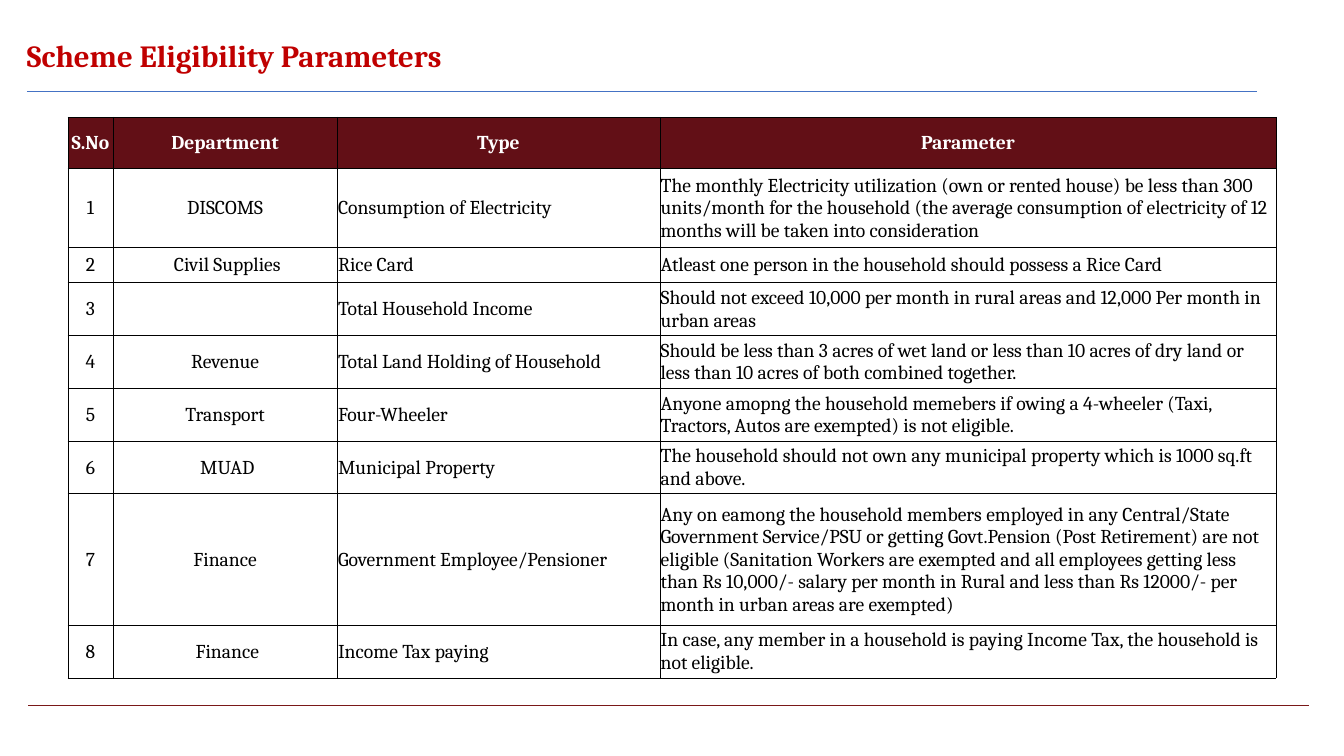
from dataclasses import dataclass

from lxml import etree
from pptx import Presentation
from pptx import util as u
from pptx.dml import color
from pptx.enum import shapes, text
from pptx.oxml import ns


@dataclass(frozen=True)
class Theme:
    font: str = "Cambria"
    title_size: float = 22
    title_leading: float = 23
    table_size: float = 14
    title: str = "C00000"
    header_fill: str = "620F16"
    header_text: str = "FFFFFF"
    body_text: str = "000000"
    border: str = "000000"
    border_width: float = 0.5
    title_rule: str = "4472C4"
    footer_rule: str = "7A1818"


THEME = Theme()
CENTER, LEFT = text.PP_ALIGN.CENTER, text.PP_ALIGN.LEFT

COLUMN_WIDTHS = (1.14, 5.65, 8.13, 15.53)
COLUMN_ALIGNMENTS = (CENTER, CENTER, LEFT, LEFT)
ROW_HEIGHTS = (1.29, 2, 0.88, 1.33, 1.33, 1.33, 1.33, 3.31, 1.33)
HEADERS = ("S.No", "Department", "Type", "Parameter")
CRITERIA = (
    ("DISCOMS", "Consumption of Electricity",
     "The monthly Electricity utilization (own or rented house) be less than 300 "
     "units/month for the household (the average consumption of electricity of 12 "
     "months will be taken into consideration"),
    (" Civil Supplies", "Rice Card",
     "Atleast one person in the household should possess a Rice Card"),
    ("", "Total Household Income",
     "Should not exceed 10,000 per month in rural areas and 12,000 Per month in "
     "urban areas"),
    ("Revenue", "Total Land Holding of Household",
     "Should be less than 3 acres of wet land or less than 10 acres of dry land or "
     "less than 10 acres of both combined together."),
    ("Transport", "Four-Wheeler",
     "Anyone amopng the household memebers if owing a 4-wheeler (Taxi, Tractors, "
     "Autos are exempted) is not eligible."),
    (" MUAD", "Municipal Property",
     "The household should not own any municipal property which is 1000 sq.ft and "
     "above."),
    ("Finance", "Government Employee/Pensioner",
     "Any on eamong the household members employed in any Central/State Government "
     "Service/PSU or getting Govt.Pension (Post Retirement) are not eligible "
     "(Sanitation Workers are exempted and all employees getting less than Rs "
     "10,000/- salary per month in Rural and less than Rs 12000/- per month in urban "
     "areas are exempted)"),
    (" Finance", "Income Tax paying",
     "In case, any member in a household is paying Income Tax, the household is not "
     "eligible."),
)


def rgb(value):
    return color.RGBColor.from_string(value)


def style_font(font, size, ink, bold):
    font.name = THEME.font
    font.size = u.Pt(size)
    font.bold = bold
    font.color.rgb = rgb(ink)


def add_title(page, wording):
    box = page.shapes.title
    box.left, box.top, box.width, box.height = map(u.Cm, (0.68, 1.02, 21.89, 0.83))
    frame = box.text_frame
    frame.margin_left = frame.margin_top = frame.margin_right = frame.margin_bottom = 0
    frame.word_wrap = True
    frame.vertical_anchor = text.MSO_ANCHOR.BOTTOM
    frame.auto_size = text.MSO_AUTO_SIZE.SHAPE_TO_FIT_TEXT
    para = frame.paragraphs[0]
    para.alignment = LEFT
    para.line_spacing = u.Pt(THEME.title_leading)
    span = para.add_run()
    span.text = wording
    style_font(span.font, THEME.title_size, THEME.title, True)


def add_rule(page, left, right, top, ink, width):
    rule = page.shapes.add_connector(
        shapes.MSO_CONNECTOR.STRAIGHT, u.Cm(left), u.Cm(top), u.Cm(right), u.Cm(top))
    rule.line.color.rgb = rgb(ink)
    rule.line.width = u.Pt(width)
    etree.SubElement(rule.element.spPr, ns.qn("a:effectLst"))


def add_borders(cell):
    properties = cell._tc.get_or_add_tcPr()
    for position, side in enumerate(("lnL", "lnR", "lnT", "lnB")):
        line = etree.Element(ns.qn(f"a:{side}"), w=str(u.Pt(THEME.border_width)))
        fill = etree.SubElement(line, ns.qn("a:solidFill"))
        etree.SubElement(fill, ns.qn("a:srgbClr"), val=THEME.border)
        properties.insert(position, line)


def fill_cell(cell, wording, alignment, is_header):
    cell.margin_left = cell.margin_top = cell.margin_right = u.Cm(0.02)
    cell.margin_bottom = 0
    cell.vertical_anchor = text.MSO_ANCHOR.MIDDLE
    if is_header:
        cell.fill.solid()
        cell.fill.fore_color.rgb = rgb(THEME.header_fill)
    else:
        cell.fill.background()
    add_borders(cell)
    para = cell.text_frame.paragraphs[0]
    para.alignment = alignment
    if wording:
        span = para.add_run()
        span.text = wording
        ink = THEME.header_text if is_header else THEME.body_text
        style_font(span.font, THEME.table_size, ink, is_header)


def add_criteria_table(page):
    rows = [HEADERS] + [(str(n), *item) for n, item in enumerate(CRITERIA, 1)]
    table = page.shapes.add_table(
        len(rows), len(HEADERS), u.Cm(1.71), u.Cm(2.95),
        u.Cm(sum(COLUMN_WIDTHS)), u.Cm(sum(ROW_HEIGHTS))).table
    table.horz_banding = False
    for column, width in zip(table.columns, COLUMN_WIDTHS):
        column.width = u.Cm(width)
    for r, (wordings, height) in enumerate(zip(rows, ROW_HEIGHTS)):
        table.rows[r].height = u.Cm(height)
        for c, wording in enumerate(wordings):
            alignment = CENTER if r == 0 else COLUMN_ALIGNMENTS[c]
            fill_cell(table.cell(r, c), wording, alignment, r == 0)


def main():
    deck = Presentation()
    deck.slide_width, deck.slide_height = u.Cm(33.87), u.Cm(19.05)
    page = deck.slides.add_slide(deck.slide_layouts.get_by_name("Title Only"))
    add_rule(page, 0.71, 32.99, 17.78, THEME.footer_rule, 0.75)
    add_title(page, "Scheme Eligibility Parameters")
    add_criteria_table(page)
    add_rule(page, 0.68, 31.67, 2.3, THEME.title_rule, 0.48)
    deck.save("out.pptx")


if __name__ == "__main__":
    main()
